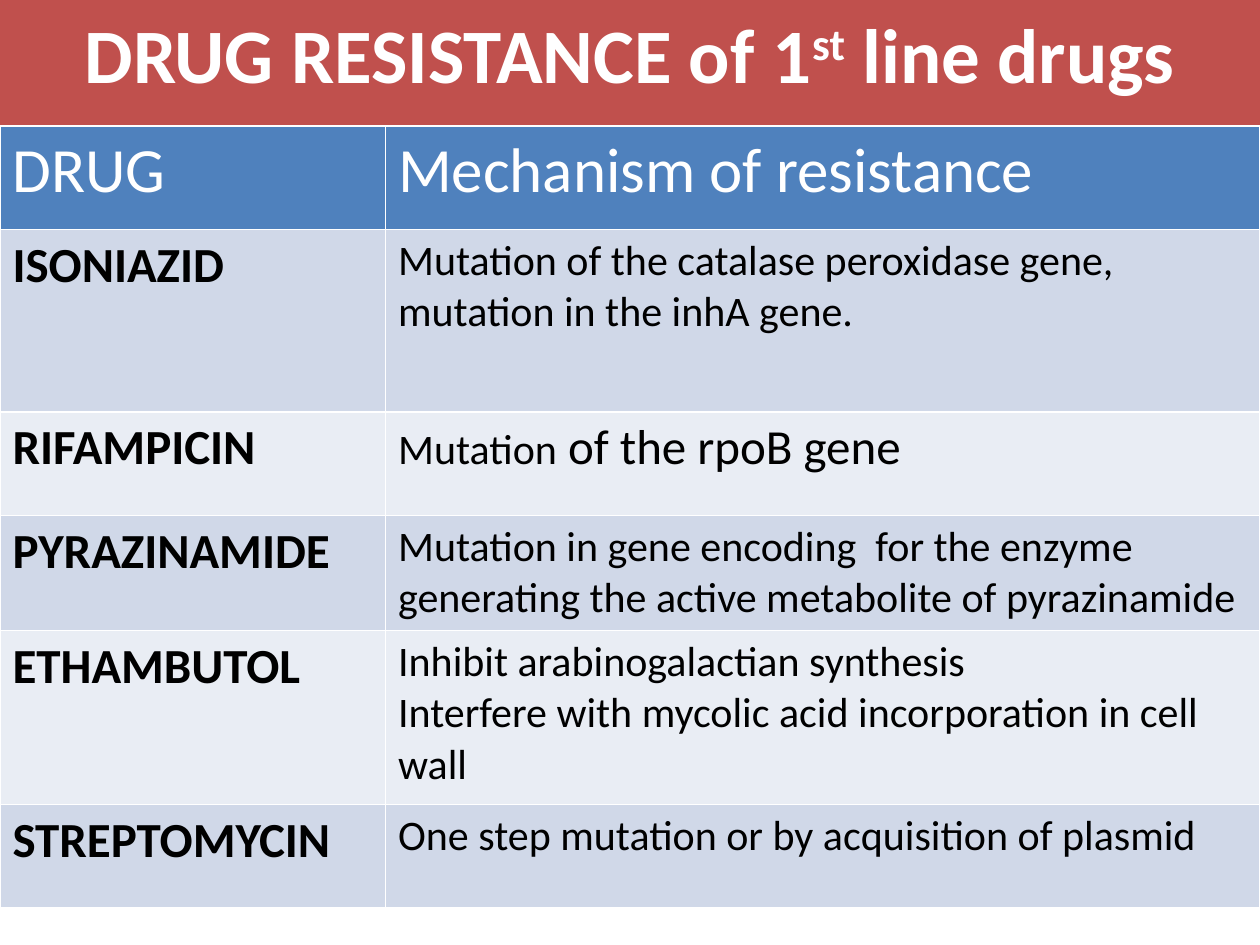
import pptx
import pptx.dml.color
import pptx.enum.shapes
import pptx.enum.text
import pptx.util

Inches = pptx.util.Inches
RGBColor = pptx.dml.color.RGBColor

RED = RGBColor(0xC0, 0x50, 0x4D)
BLUE = RGBColor(0x4F, 0x81, 0xBD)
BANDS = (RGBColor(0xD0, 0xD8, 0xE8), RGBColor(0xE9, 0xED, 0xF4))
WHITE = RGBColor(0xFF, 0xFF, 0xFF)
BLACK = RGBColor(0x00, 0x00, 0x00)

HEADINGS = ("DRUG", "Mechanism of resistance")
RESISTANCE = (
    ("ISONIAZID", [[("Mutation of the catalase peroxidase gene, mutation in the inhA gene.", 24)]]),
    ("RIFAMPICIN", [[("Mutation", 24), (" of the rpoB gene", 28)]]),
    ("PYRAZINAMIDE", [[("Mutation in gene encoding  for the enzyme generating "
                        "the active metabolite of pyrazinamide", 24)]]),
    ("ETHAMBUTOL", [[("Inhibit arabinogalactian synthesis", 24)],
                    [("Interfere with mycolic acid incorporation in cell wall", 24)]]),
    ("STREPTOMYCIN", [[("One step mutation or by acquisition of plasmid", 24)]]),
)
COLUMN_WIDTHS = (3.06, 6.94)
ROW_HEIGHTS = (0.82, 1.45, 0.82, 0.82, 1.38, 0.82)


class ResistanceSlide:
    font_name = "Calibri"

    def __init__(self, slide):
        self.slide = slide

    def fill_text(self, frame, paragraphs, color, bold=False):
        for index, pieces in enumerate(paragraphs):
            paragraph = frame.add_paragraph() if index else frame.paragraphs[0]
            for words, size in pieces:
                run = paragraph.add_run()
                run.text = words
                run.font.name = self.font_name
                run.font.size = pptx.util.Pt(size)
                run.font.bold = bold
                run.font.color.rgb = color

    def banner(self, pieces, superscript):
        banner = self.slide.shapes.add_shape(
            pptx.enum.shapes.MSO_SHAPE.RECTANGLE, 0, 0, Inches(10), Inches(1.25))
        banner.shadow.inherit = False
        banner.fill.solid()
        banner.fill.fore_color.rgb = RED
        banner.line.fill.background()
        frame = banner.text_frame
        frame.word_wrap = True
        frame.vertical_anchor = pptx.enum.text.MSO_ANCHOR.TOP
        self.fill_text(frame, [[(words, 44) for words in pieces]], WHITE, bold=True)
        heading = frame.paragraphs[0]
        heading.alignment = pptx.enum.text.PP_ALIGN.CENTER
        heading.runs[superscript].font._element.set("baseline", "30000")

    def cell(self, cell, paragraphs, fill, color, bold=False):
        cell.fill.solid()
        cell.fill.fore_color.rgb = fill
        self.fill_text(cell.text_frame, paragraphs, color, bold)

    def table(self, headings, rows):
        table = self.slide.shapes.add_table(
            len(rows) + 1, len(headings), 0, Inches(1),
            Inches(sum(COLUMN_WIDTHS)), Inches(sum(ROW_HEIGHTS))).table
        for column, width in zip(table.columns, COLUMN_WIDTHS):
            column.width = Inches(width)
        for row, height in zip(table.rows, ROW_HEIGHTS):
            row.height = Inches(height)
        for column, heading in enumerate(headings):
            self.cell(table.cell(0, column), [[(heading, 36)]], BLUE, WHITE)
        for index, (drug, mechanism) in enumerate(rows):
            band = BANDS[index % 2]
            self.cell(table.cell(index + 1, 0), [[(drug, 28)]], band, BLACK, bold=True)
            self.cell(table.cell(index + 1, 1), mechanism, band, BLACK)


def main():
    deck = pptx.Presentation()
    deck.slide_width = Inches(10)
    deck.slide_height = Inches(7.5)
    page = ResistanceSlide(deck.slides.add_slide(deck.slide_layouts[6]))
    page.banner(("DRUG RESISTANCE of 1", "st", " line drugs"), superscript=1)
    page.table(HEADINGS, RESISTANCE)
    deck.save("out.pptx")


if __name__ == "__main__":
    main()
